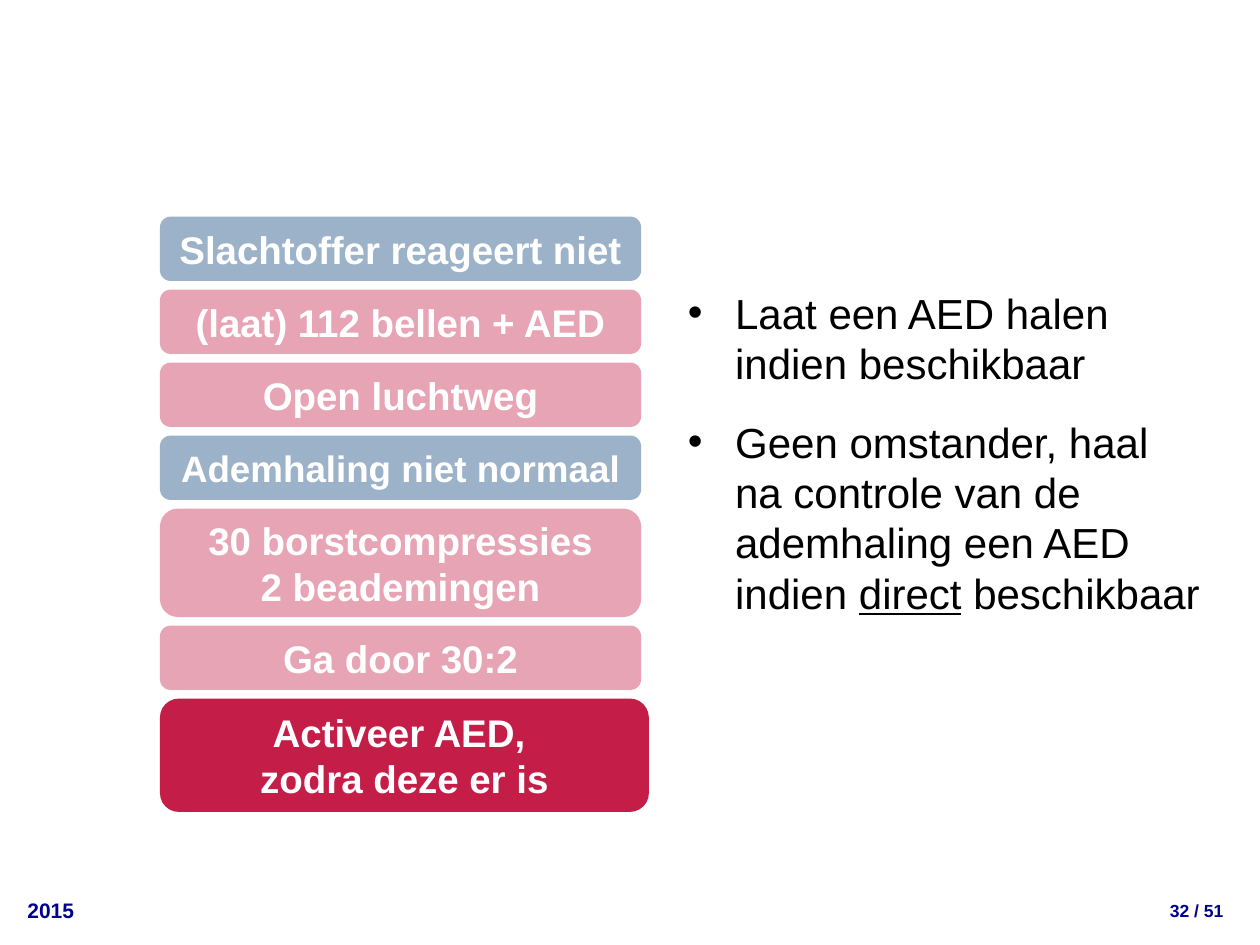
import dataclasses

import pptx
import pptx.dml.color
import pptx.enum.shapes
import pptx.enum.text
import pptx.oxml.ns
import pptx.util
from lxml import etree

Pt = pptx.util.Pt
Anchor = pptx.enum.text.MSO_ANCHOR
Align = pptx.enum.text.PP_ALIGN


@dataclasses.dataclass(frozen=True)
class Theme:
    font: str = "Arial"
    red: str = "C41D48"
    blue: str = "084077"
    navy: str = "000090"
    white: str = "FFFFFF"
    black: str = "000000"
    body_size: float = 24
    step_size: float = 22
    tight_step_size: float = 21
    year_size: float = 12
    page_size: float = 10
    faded_alpha: int = 40


def rgb(value):
    return pptx.dml.color.RGBColor.from_string(value)


def add_span(para, text, *, font, size, color, bold=False, underline=None):
    span = para.add_run()
    span.text = text
    span.font.name = font
    span.font.size = Pt(size)
    span.font.color.rgb = rgb(color)
    span.font.bold = bold
    span.font.underline = underline


def add_child(parent, tag, **attributes):
    return etree.SubElement(parent, pptx.oxml.ns.qn(tag), attributes)


def paragraphs(frame, count):
    """Return the frame's first paragraph followed by new ones."""
    return [frame.paragraphs[0]] + [frame.add_paragraph() for _ in range(count - 1)]


class SlideBuilder:
    def __init__(self, slide, theme):
        self.slide = slide
        self.theme = theme

    def label(self, text, left, top, width, height, size):
        box = self.slide.shapes.add_textbox(Pt(left), Pt(top), Pt(width), Pt(height))
        frame = box.text_frame
        frame.vertical_anchor = Anchor.MIDDLE
        frame.word_wrap = False
        add_span(frame.paragraphs[0], text, font=self.theme.font, size=size,
                 color=self.theme.navy, bold=True)

    def step(self, lines, left, top, width, height, color, size, faded=True):
        box = self.slide.shapes.add_shape(
            pptx.enum.shapes.MSO_SHAPE.ROUNDED_RECTANGLE,
            Pt(left), Pt(top), Pt(width), Pt(height))
        box.shadow.inherit = False
        box.line.fill.background()
        box.fill.solid()
        box.fill.fore_color.rgb = rgb(color)
        if faded:
            swatch = box.fill._xPr.find(".//" + pptx.oxml.ns.qn("a:srgbClr"))
            add_child(swatch, "a:alpha", val=str(self.theme.faded_alpha * 1000))
        frame = box.text_frame
        frame.word_wrap = True
        frame.vertical_anchor = Anchor.MIDDLE
        for para, text in zip(paragraphs(frame, len(lines)), lines):
            para.alignment = Align.CENTER
            add_span(para, text, font=self.theme.font, size=size,
                     color=self.theme.white, bold=True)

    def bullets(self, items, left, top, width, height, indent, gap):
        """Each item is a list of (text, underlined) pairs."""
        box = self.slide.shapes.add_textbox(Pt(left), Pt(top), Pt(width), Pt(height))
        frame = box.text_frame
        frame.word_wrap = True
        for index, (para, spans) in enumerate(zip(paragraphs(frame, len(items)), items)):
            properties = para._p.get_or_add_pPr()
            properties.set("marL", str(Pt(indent)))
            properties.set("indent", str(-Pt(indent)))
            add_child(properties, "a:buFont", typeface=self.theme.font)
            add_child(properties, "a:buChar", char="•")
            if index:
                para.space_before = Pt(gap)
            for text, underlined in spans:
                add_span(para, text, font=self.theme.font, size=self.theme.body_size,
                         color=self.theme.black, underline=underlined)


def main():
    theme = Theme()
    deck = pptx.Presentation()
    deck.slide_width, deck.slide_height = Pt(720), Pt(540)
    page = SlideBuilder(deck.slides.add_slide(deck.slide_layouts[6]), theme)

    page.label("2015", 8.6, 509, 49.7, 21.8, theme.year_size)
    page.label("32 / 51", 661.5, 510.6, 53.3, 19.4, theme.page_size)

    low, high, last_high = 36.8, 62, 64.8
    wide, last_wide = 275, 279.4
    steps = [
        (["Slachtoffer reageert niet"], wide, low, theme.blue, theme.step_size, True),
        (["(laat) 112 bellen + AED"], wide, low, theme.red, theme.step_size, True),
        (["Open luchtweg"], wide, low, theme.red, theme.step_size, True),
        (["Ademhaling niet normaal"], wide, low, theme.blue, theme.tight_step_size, True),
        (["30 borstcompressies", "2 beademingen"], wide, high, theme.red,
         theme.step_size, True),
        (["Ga door 30:2"], wide, low, theme.red, theme.step_size, True),
        (["Activeer AED, ", "zodra deze er is"], last_wide, last_high, theme.red,
         theme.step_size, False),
    ]
    top, gap = 123.8, 4.9
    for lines, width, height, color, size, faded in steps:
        page.step(lines, 91.4, top, width, height, color, size, faded)
        top += height + gap

    page.bullets(
        [
            [("Laat een AED halen indien beschikbaar", None)],
            [("Geen omstander, haal na controle van de ademhaling een AED indien ", None),
             ("direct", True), (" beschikbaar", None)],
        ],
        386, 160.6, 308.9, 198, indent=27, gap=16)

    deck.save("out.pptx")


if __name__ == "__main__":
    main()
